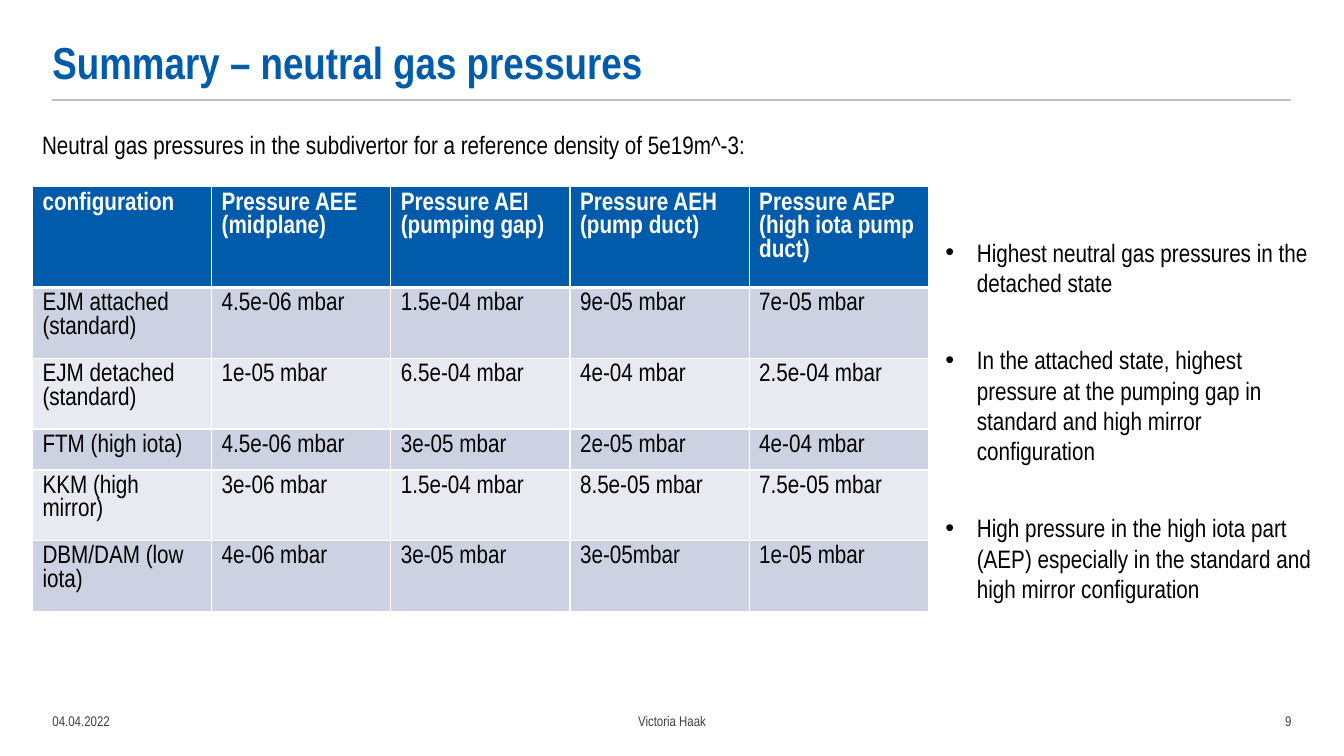
from lxml import etree
from pptx import Presentation
from pptx import util as u
from pptx.dml.color import RGBColor
from pptx.enum import shapes, text
from pptx.oxml import ns

COLORS = {
    "blue": "005BAA",
    "black": "000000",
    "white": "FFFFFF",
    "footer": "404040",
    "rule": "BFBFBF",
    "odd_row": "CCD2E2",
    "even_row": "E7EAF1",
}

PRESSURES = [
    ["configuration", "Pressure AEE (midplane)", "Pressure AEI (pumping gap)",
     "Pressure AEH (pump duct)", "Pressure AEP (high iota pump duct)"],
    ["EJM attached (standard)", "4.5e-06 mbar", "1.5e-04 mbar", "9e-05 mbar", "7e-05 mbar"],
    ["EJM detached (standard)", "1e-05 mbar", "6.5e-04 mbar", "4e-04 mbar", "2.5e-04 mbar"],
    ["FTM (high iota)", "4.5e-06 mbar", "3e-05 mbar", "2e-05 mbar", "4e-04 mbar"],
    ["KKM (high mirror)", "3e-06 mbar", "1.5e-04 mbar", "8.5e-05 mbar", "7.5e-05 mbar"],
    ["DBM/DAM (low iota)", "4e-06 mbar", "3e-05 mbar", "3e-05mbar", "1e-05 mbar"],
]
ROW_HEIGHTS = [71.5, 50.5, 50.5, 29.3, 50.5, 50.5]

FINDINGS = [
    "Highest neutral gas pressures in the detached state",
    "In the attached state, highest pressure at the pumping gap in standard and "
    "high mirror configuration",
    "High pressure in the high iota part (AEP) especially in the standard and "
    "high mirror configuration",
]


def color(name):
    return RGBColor.from_string(COLORS[name])


class SlideBuilder:
    font_name = "Arial Narrow"
    body_size = 18

    def __init__(self, slide):
        self.slide = slide

    def style(self, paragraph, size=body_size, fill="black", bold=False):
        font = paragraph.font
        font.name = self.font_name
        font.size = u.Pt(size)
        font.bold = bold
        font.color.rgb = color(fill)

    def frame(self, box, insets=(7.2, 3.6, 7.2, 3.6), anchor=text.MSO_ANCHOR.TOP):
        shape = self.slide.shapes.add_textbox(*map(u.Pt, box))
        frame = shape.text_frame
        frame.word_wrap = True
        frame.vertical_anchor = anchor
        (frame.margin_left, frame.margin_top,
         frame.margin_right, frame.margin_bottom) = map(u.Pt, insets)
        return frame

    def label(self, words, box, align=text.PP_ALIGN.LEFT, spacing=1.0,
              insets=(7.2, 3.6, 7.2, 3.6), anchor=text.MSO_ANCHOR.TOP, **style):
        paragraph = self.frame(box, insets, anchor).paragraphs[0]
        paragraph.text = words
        paragraph.alignment = align
        paragraph.line_spacing = spacing
        self.style(paragraph, **style)

    def bullets(self, items, box, insets, gap, indent):
        frame = self.frame(box, insets)
        for index, item in enumerate(items):
            paragraph = frame.add_paragraph() if index else frame.paragraphs[0]
            paragraph.text = item
            if index:
                paragraph.space_before = u.Pt(gap)
            properties = paragraph._p.get_or_add_pPr()
            properties.set("marL", str(u.Pt(indent)))
            properties.set("indent", str(-u.Pt(indent)))
            etree.SubElement(properties, ns.qn("a:buFont")).set("typeface", "Arial")
            etree.SubElement(properties, ns.qn("a:buChar")).set("char", "•")
            self.style(paragraph)

    def rule(self, left, top, right):
        line = self.slide.shapes.add_connector(
            shapes.MSO_CONNECTOR.STRAIGHT, *map(u.Pt, (left, top, right, top)))
        line.line.color.rgb = color("rule")
        line.line.width = u.Pt(1)
        etree.SubElement(line._element.spPr, ns.qn("a:effectLst"))

    def borders(self, cell, bottom):
        properties = cell._tc.get_or_add_tcPr()
        for index, (side, width) in enumerate(zip("LRTB", (1, 1, 1, bottom))):
            line = etree.Element(ns.qn(f"a:ln{side}"), w=str(u.Pt(width)))
            fill = etree.SubElement(line, ns.qn("a:solidFill"))
            etree.SubElement(fill, ns.qn("a:srgbClr")).set("val", COLORS["white"])
            properties.insert(index, line)

    def table(self, rows, heights, left, top, column_width):
        columns = len(rows[0])
        table = self.slide.shapes.add_table(
            len(rows), columns, u.Pt(left), u.Pt(top),
            u.Pt(column_width * columns), u.Pt(sum(heights))).table
        for column in table.columns:
            column.width = u.Pt(column_width)
        for index, (row, height) in enumerate(zip(rows, heights)):
            header = index == 0
            fill = "blue" if header else "odd_row" if index % 2 else "even_row"
            table.rows[index].height = u.Pt(height)
            for cell, words in zip(table.rows[index].cells, row):
                cell.fill.solid()
                cell.fill.fore_color.rgb = color(fill)
                self.borders(cell, bottom=3 if header else 1)
                paragraph = cell.text_frame.paragraphs[0]
                paragraph.text = words
                self.style(paragraph, fill="white" if header else "black", bold=header)


def main():
    presentation = Presentation()
    presentation.slide_width = u.Pt(960)
    presentation.slide_height = u.Pt(540)
    builder = SlideBuilder(presentation.slides.add_slide(presentation.slide_layouts[6]))

    builder.rule(37.5, 71.5, 922.5)
    builder.label("Summary – neutral gas pressures", (37.5, 15.1, 748, 51.8),
                  spacing=0.9, insets=(0, 3.6, 0, 3.6), anchor=text.MSO_ANCHOR.BOTTOM,
                  size=32, fill="blue", bold=True)

    footers = [
        ("04.04.2022", 37.5, 88, text.PP_ALIGN.LEFT),
        ("Victoria Haak", 142.5, 675, text.PP_ALIGN.CENTER),
        ("9", 837.5, 85, text.PP_ALIGN.RIGHT),
    ]
    for words, left, width, align in footers:
        builder.label(words, (left, 500.5, width, 28.8), align=align,
                      insets=(0, 3.6, 0, 3.6), anchor=text.MSO_ANCHOR.MIDDLE,
                      size=10, fill="footer")

    builder.bullets(FINDINGS, (668.2, 138.2, 280.8, 321.1),
                    insets=(7.2, 31.2, 7.2, 3.6), gap=33.6, indent=22.5)
    builder.table(PRESSURES, ROW_HEIGHTS, left=23.2, top=133.4, column_width=128)
    builder.label("Neutral gas pressures in the subdivertor for a reference density of 5e19m^-3:",
                  (23, 88.6, 597, 28.8))
    presentation.save("out.pptx")


if __name__ == "__main__":
    main()
